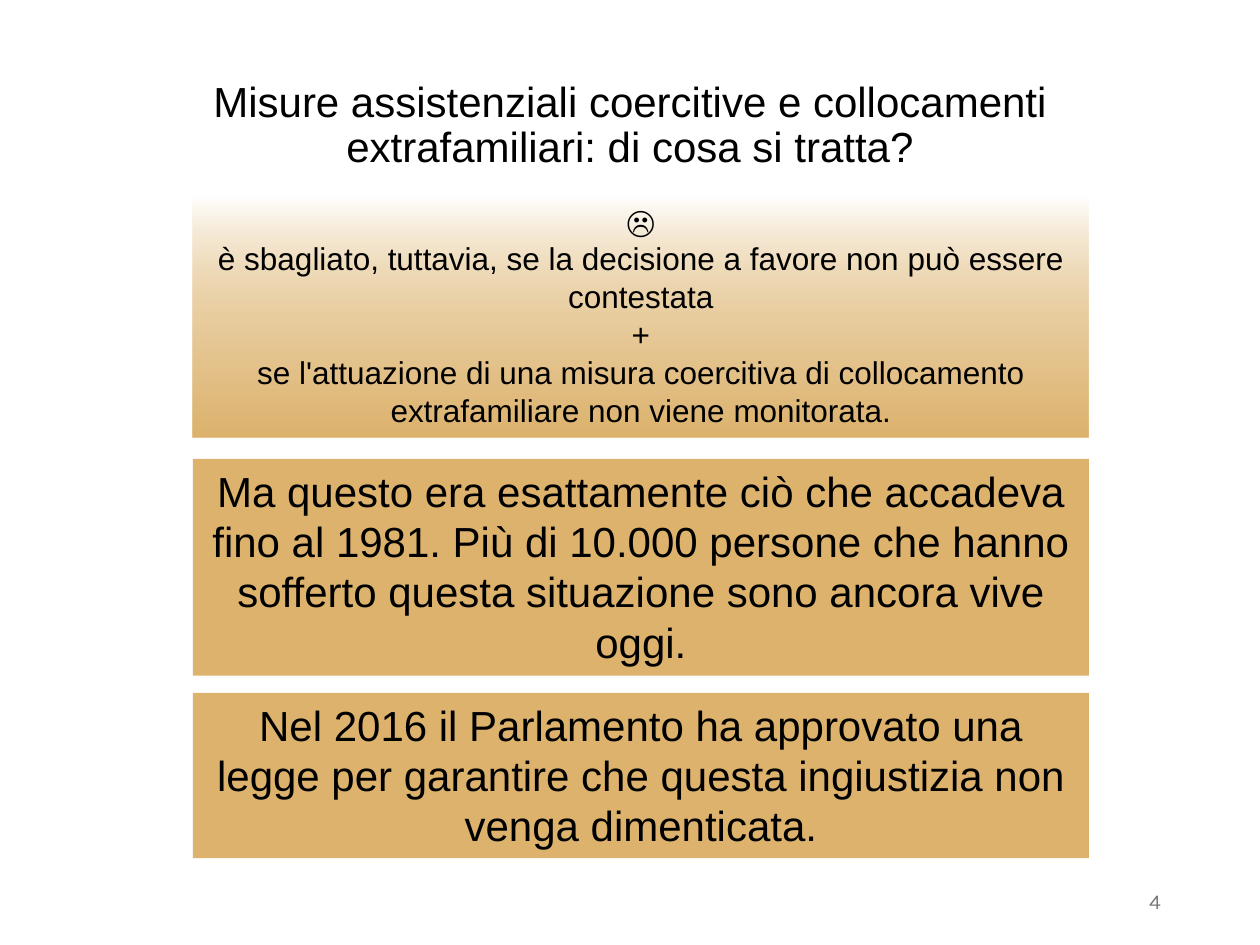
from lxml.etree import SubElement
from pptx import Presentation
from pptx.dml.color import RGBColor
from pptx.enum.shapes import MSO_SHAPE as Shape
from pptx.enum.text import MSO_ANCHOR as Anchor, MSO_AUTO_SIZE as Auto, PP_ALIGN as Align
from pptx.oxml.ns import qn
from pptx.util import Cm, Pt

BLACK = RGBColor(0x00, 0x00, 0x00)
WHITE = RGBColor(0xFF, 0xFF, 0xFF)
GOLD = RGBColor(0xDC, 0xB2, 0x6C)
GREY = RGBColor(0x79, 0x79, 0x79)

LEFT, WIDTH = 3.89, 18.06
FADE = [(0, WHITE, 100), (52, GOLD, 66), (100, GOLD, 100)]

ISSUE = [
    "☹",
    "è sbagliato, tuttavia, se la decisione a favore non può essere contestata",
    "+",
    "se l'attuazione di una misura coercitiva di collocamento extrafamiliare "
    "non viene monitorata.",
]
PAST = [
    "Ma questo era esattamente ciò che accadeva fino al 1981. Più di 10.000 "
    "persone che hanno sofferto questa situazione sono ancora vive oggi."
]
LAW = [
    "Nel 2016 il Parlamento ha approvato una legge per garantire che questa "
    "ingiustizia non venga dimenticata."
]


class Deck:
    """Hold the text style and the current slide."""

    def __init__(self, slide, font="Arial", color=BLACK):
        self.slide = slide
        self.font = font
        self.color = color

    def run(self, para, text, size, font=None, color=None):
        run = para.add_run()
        run.text = text
        run.font.size = Pt(size)
        run.font.name = font or self.font
        run.font.color.rgb = color or self.color

    def title(self, lines, left, top, width, height):
        shape = self.slide.shapes.title
        shape.left, shape.top = Cm(left), Cm(top)
        shape.width, shape.height = Cm(width), Cm(height)
        frame = shape.text_frame
        frame.vertical_anchor = Anchor.MIDDLE
        para = frame.paragraphs[0]
        para.alignment = Align.CENTER
        para.line_spacing = 0.9
        for i, line in enumerate(lines):
            if i:
                para.add_line_break()
            self.run(para, line, 24)

    def panel(self, texts, top, height, size, stops=None):
        shape = self.slide.shapes.add_shape(
            Shape.RECTANGLE, Cm(LEFT), Cm(top), Cm(WIDTH), Cm(height))
        shape.shadow.inherit = False
        shape.line.fill.background()
        if stops:
            self.fade(shape, stops)
        else:
            shape.fill.solid()
            shape.fill.fore_color.rgb = GOLD
        frame = shape.text_frame
        frame.word_wrap = True
        frame.auto_size = Auto.SHAPE_TO_FIT_TEXT
        frame.vertical_anchor = Anchor.TOP
        for i, text in enumerate(texts):
            para = frame.add_paragraph() if i else frame.paragraphs[0]
            para.alignment = Align.CENTER
            self.run(para, text, size)

    def fade(self, shape, stops):
        shape.fill.gradient()
        shape.fill.gradient_angle = 270
        items = next(shape.element.iter(qn("a:gsLst")))
        for item in list(items):
            items.remove(item)
        for pos, color, alpha in stops:
            stop = SubElement(items, qn("a:gs"), pos=str(pos * 1000))
            tone = SubElement(stop, qn("a:srgbClr"), val=str(color))
            if alpha < 100:
                SubElement(tone, qn("a:alpha"), val=str(alpha * 1000))

    def number(self, text, left, top, width, height):
        box = self.slide.shapes.add_textbox(Cm(left), Cm(top), Cm(width), Cm(height))
        frame = box.text_frame
        frame.word_wrap = True
        frame.vertical_anchor = Anchor.MIDDLE
        para = frame.paragraphs[0]
        para.alignment = Align.RIGHT
        self.run(para, text, 12, "Karla", GREY)


def main():
    show = Presentation()
    show.slide_width, show.slide_height = Cm(25.4), Cm(19.05)
    deck = Deck(show.slides.add_slide(show.slide_layouts[5]))
    deck.title(["Misure assistenziali coercitive e collocamenti",
                "extrafamiliari: di cosa si tratta?"], 1.75, 1.02, 21.9, 3.05)
    deck.panel(ISSUE, 3.94, 4.88, 18, FADE)
    deck.panel(PAST, 9.25, 4.37, 24)
    deck.panel(LAW, 13.97, 3.33, 24)
    deck.number("4", 17.93, 17.65, 5.72, 1.02)
    show.save("out.pptx")


if __name__ == "__main__":
    main()
